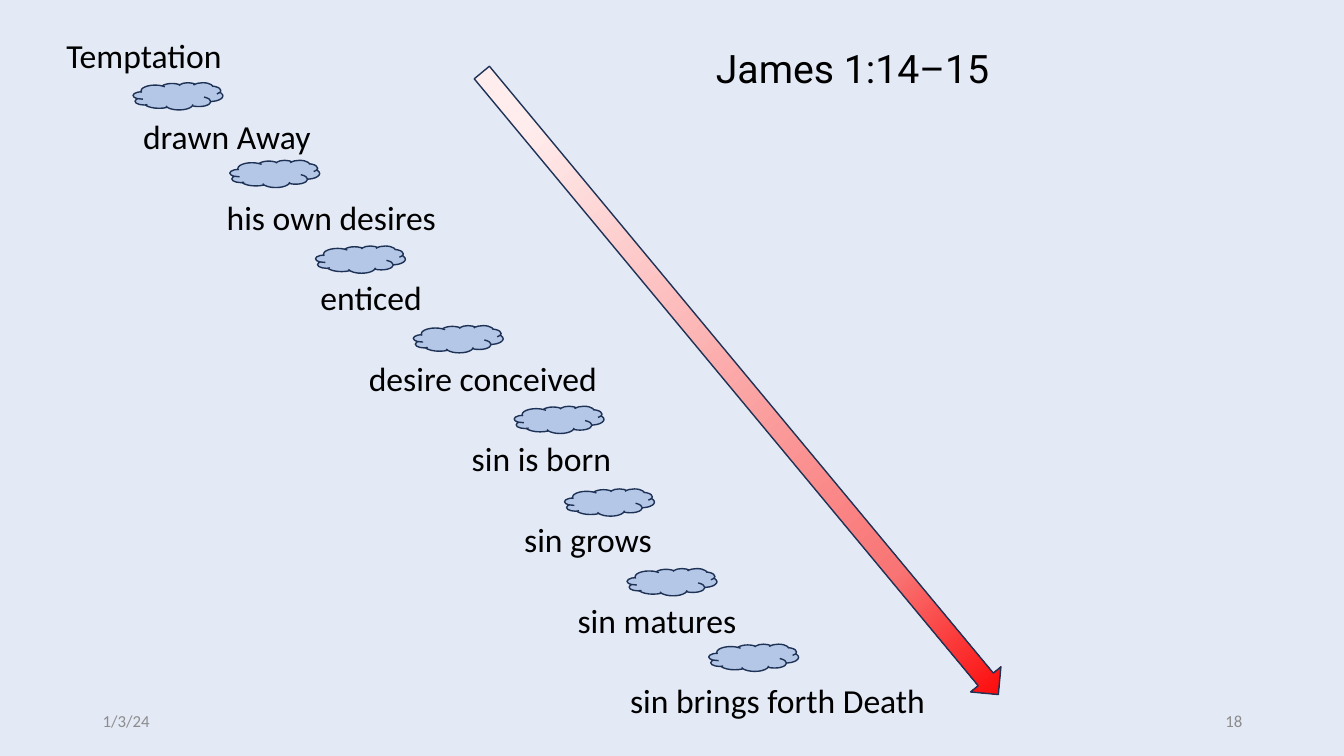
from dataclasses import dataclass

from lxml import etree
from pptx import Presentation
from pptx import util as u
from pptx.dml.color import RGBColor
from pptx.enum import shapes, text
from pptx.oxml import ns


@dataclass(frozen=True)
class Theme:
    """Colours, fonts and type sizes of the slide."""
    background: str = "E3E9F5"
    ink: str = "000000"
    muted: str = "8C8C8C"
    cloud: str = "B4C7E7"
    outline: str = "1E3256"
    arrow_stops: tuple = ((10, "FFEDED"), (79, "F97474"), (100, "FD0000"), (100, "FFE3E3"))
    body_font: str = "Calibri"
    title_font: str = "Roboto"
    title_size: int = 28
    step_size: int = 24
    footer_size: int = 12


THEME = Theme()
ROW = 0.8
TOP = 0.3
TEXT_HEIGHT = 0.5
CLOUD_SIZE = (0.89, 0.27)
STEPS = [
    ("Temptation", 0.56, 1.76),
    ("drawn Away", 1.32, 1.88),
    ("his own desires", 2.15, 2.3),
    ("enticed", 3.08, 1.22),
    ("desire conceived", 3.56, 2.49),
    ("sin is born", 4.58, 1.6),
    ("sin grows", 5.1, 1.48),
    ("sin matures", 5.63, 1.79),
    ("sin brings forth Death", 6.15, 3.15),
]
CLOUDS = [(1.32, 0.82), (2.28, 1.59), (3.13, 2.44), (4.1, 3.23),
          (5.1, 4.03), (5.6, 4.85), (6.22, 5.64), (7.03, 6.39)]


def apply(target, values):
    """Set every attribute named in a dict of format values."""
    for name, value in values.items():
        setattr(target, name, value)


def box(left, top, width, height):
    """Turn a box in inches into lengths by attribute name."""
    lengths = {"left": left, "top": top, "width": width, "height": height}
    return {name: u.Inches(value) for name, value in lengths.items()}


def write(shape, words, size, font=THEME.body_font, color=THEME.ink,
          align=text.PP_ALIGN.LEFT, **frame_format):
    """Put one formatted line of text into a shape."""
    frame = shape.text_frame
    apply(frame, frame_format)
    paragraph = frame.paragraphs[0]
    paragraph.alignment = align
    run = paragraph.add_run()
    run.text = words
    apply(run.font, {"name": font, "size": u.Pt(size)})
    run.font.color.rgb = RGBColor.from_string(color)


def add_text(slide, place, words, size, **text_format):
    """Add a text box holding one line."""
    write(slide.shapes.add_textbox(**box(*place)), words, size, **text_format)


def add_outlined(slide, kind, place):
    """Add a preset shape with the common outline."""
    shape = slide.shapes.add_shape(kind, **box(*place))
    shape.shadow.inherit = False
    shape.line.color.rgb = RGBColor.from_string(THEME.outline)
    shape.line.width = u.Pt(1)
    return shape


def add_cloud(slide, left, top):
    """Add one cloud between two steps."""
    cloud = add_outlined(slide, shapes.MSO_SHAPE.CLOUD, (left, top, *CLOUD_SIZE))
    cloud.fill.solid()
    cloud.fill.fore_color.rgb = RGBColor.from_string(THEME.cloud)


def add_arrow(slide):
    """Add the long descending arrow that deepens to red."""
    arrow = add_outlined(slide, shapes.MSO_SHAPE.RIGHT_ARROW, (3.33, 3.61, 8.02, 0.39))
    arrow.rotation = 50.3
    arrow.fill.gradient()
    arrow.fill.gradient_angle = 0
    stops = arrow.element.spPr.find(f".//{ns.qn('a:gsLst')}")
    for stop in list(stops):
        stops.remove(stop)
    for percent, color in THEME.arrow_stops:
        stop = etree.SubElement(stops, ns.qn("a:gs"), pos=str(percent * 1000))
        etree.SubElement(stop, ns.qn("a:srgbClr"), val=color)


def add_title(slide, words):
    """Move and fill the title placeholder."""
    title = slide.shapes.title
    apply(title, box(7, 0.39, 3.36, 0.57))
    write(title, words, THEME.title_size, font=THEME.title_font, word_wrap=True,
          vertical_anchor=text.MSO_ANCHOR.TOP,
          auto_size=text.MSO_AUTO_SIZE.SHAPE_TO_FIT_TEXT)


def add_footer(slide, left, words, align):
    """Add a small grey line at the foot of the slide."""
    add_text(slide, (left, 6.95, 3, 0.4), words, THEME.footer_size,
             color=THEME.muted, align=align, word_wrap=True,
             vertical_anchor=text.MSO_ANCHOR.MIDDLE)


def main():
    """Build and save the slide."""
    presentation = Presentation()
    apply(presentation, {"slide_width": u.Inches(13.33), "slide_height": u.Inches(7.5)})
    slide = presentation.slides.add_slide(presentation.slide_layouts[5])
    slide.background.fill.solid()
    slide.background.fill.fore_color.rgb = RGBColor.from_string(THEME.background)

    add_footer(slide, 0.92, "1/3/24", text.PP_ALIGN.LEFT)
    add_footer(slide, 9.42, "18", text.PP_ALIGN.RIGHT)
    for row, (words, left, width) in enumerate(STEPS):
        add_text(slide, (left, TOP + row * ROW, width, TEXT_HEIGHT), words,
                 THEME.step_size, word_wrap=False,
                 auto_size=text.MSO_AUTO_SIZE.SHAPE_TO_FIT_TEXT)
    add_arrow(slide)
    for left, top in CLOUDS:
        add_cloud(slide, left, top)
    add_title(slide, "James 1:14–15")
    presentation.save("out.pptx")


if __name__ == "__main__":
    main()
